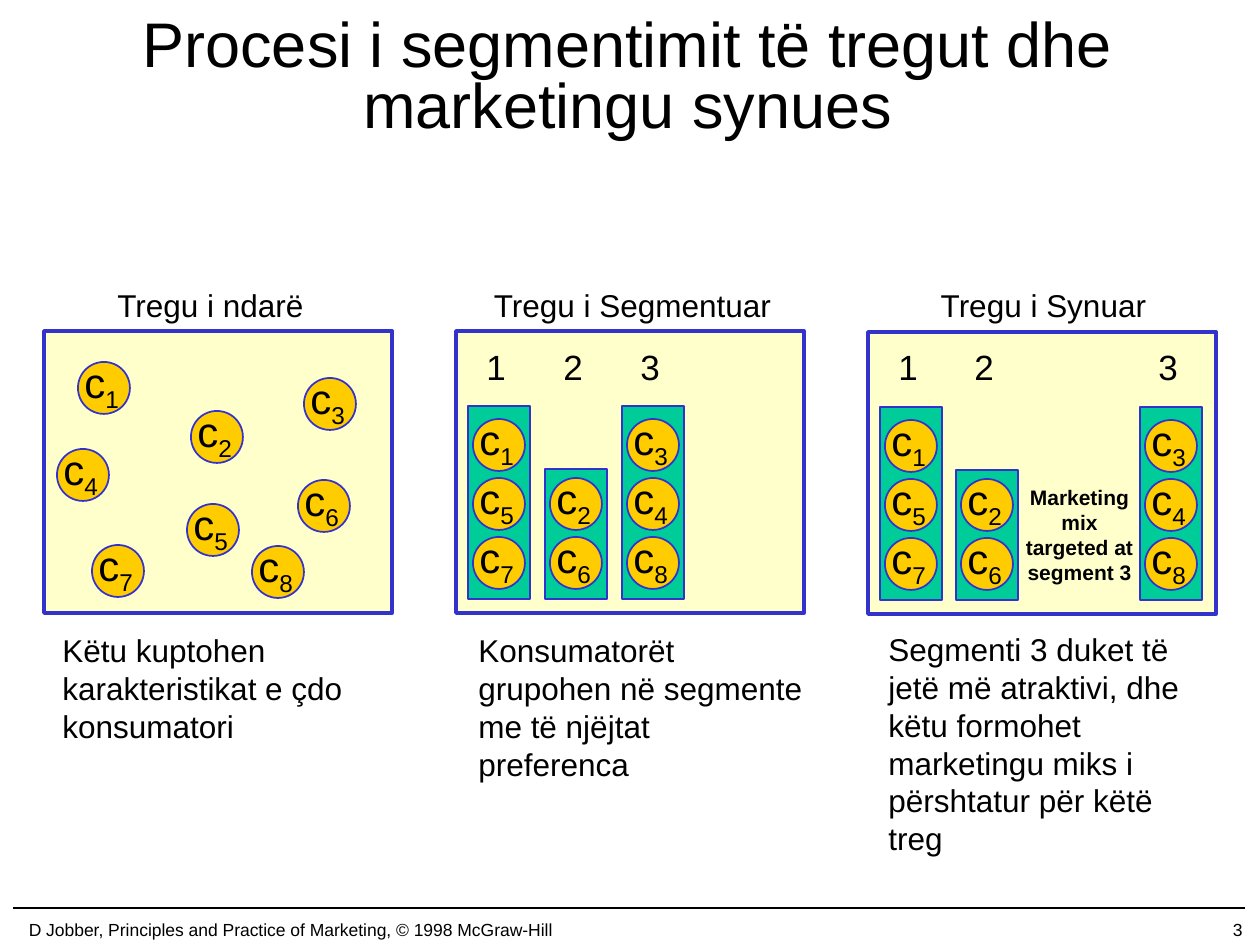
from pptx import Presentation
from pptx import util as u
from pptx.dml.color import RGBColor
from pptx.enum import shapes, text

BLACK = RGBColor(0x00, 0x00, 0x00)
CREAM = RGBColor(0xFF, 0xFF, 0xCC)
GREEN = RGBColor(0x00, 0xCC, 0x99)
ORANGE = RGBColor(0xFF, 0xCC, 0x00)
BLUE = RGBColor(0x33, 0x33, 0xCC)
LEFT, CENTER, RIGHT = text.PP_ALIGN.LEFT, text.PP_ALIGN.CENTER, text.PP_ALIGN.RIGHT
TOP, MIDDLE = text.MSO_ANCHOR.TOP, text.MSO_ANCHOR.MIDDLE
RECTANGLE, OVAL = shapes.MSO_SHAPE.RECTANGLE, shapes.MSO_SHAPE.OVAL
SCALE = 914400 / 126

presentation = Presentation()
presentation.slide_width = u.Emu(round(1260 * SCALE))
presentation.slide_height = u.Emu(round(945 * SCALE))
slide = presentation.slides.add_slide(presentation.slide_layouts[6])


def add_box(kind, box, fill, line_width):
    shape = slide.shapes.add_shape(kind, *[u.Emu(round(n * SCALE)) for n in box])
    shape.shadow.inherit = False
    shape.fill.solid()
    shape.fill.fore_color.rgb = fill
    shape.line.color.rgb = BLUE
    shape.line.width = u.Pt(line_width)


def add_text(words, box, size, align=LEFT, wrap=False, anchor=TOP, bold=False, subscript=None):
    shape = slide.shapes.add_textbox(*[u.Emu(round(n * SCALE)) for n in box])
    frame = shape.text_frame
    frame.word_wrap = wrap
    frame.vertical_anchor = anchor
    paragraph = frame.paragraphs[0]
    paragraph.alignment = align
    values = {"size": u.Pt(size), "name": "Arial", "bold": bold}
    for part in filter(None, (words, subscript)):
        run = paragraph.add_run()
        run.text = part
        for name, value in values.items():
            setattr(run.font, name, value)
        run.font.color.rgb = BLACK
        if part == subscript:
            run._r.get_or_add_rPr().set("baseline", "-25000")
    return paragraph


rule = slide.shapes.add_connector(
    shapes.MSO_CONNECTOR.STRAIGHT, *[u.Emu(round(n * SCALE)) for n in (13, 908, 1245, 908)])
rule.line.color.rgb = BLACK
rule.line.width = u.Pt(1)
rule._element.spPr.get_or_add_effectLst() if hasattr(rule._element.spPr, "get_or_add_effectLst") else None
add_text("3", (993, 914, 262, 31), 10, RIGHT, anchor=MIDDLE)
add_text("D Jobber, Principles and Practice of Marketing, © 1998 McGraw-Hill",
         (0, 914, 581, 31), 10, CENTER, anchor=MIDDLE)
title = add_text("Procesi i segmentimit të tregut dhe marketingu synues",
                 (92, 1, 1071, 158), 36, CENTER, True, MIDDLE)
title.line_spacing = 0.8

panels = [
    (44, 331, "Tregu i ndarë", (105, 280, 218, 50), LEFT,
     "Këtu kuptohen karakteristikat e çdo konsumatori", (50, 625, 343, 127)),
    (456, 331, "Tregu i Segmentuar", (480, 280, 305, 50), CENTER,
     "Konsumatorët grupohen në segmente me të njëjtat preferenca", (466, 625, 354, 165)),
    (868, 332, "Tregu i Synuar", (866, 280, 355, 52), CENTER,
     "Segmenti 3 duket të jetë më atraktivi, dhe këtu formohet marketingu miks "
     "i përshtatur për këtë treg", (876, 624, 340, 241)),
]
for left, top, heading, heading_box, align, caption, caption_box in panels:
    add_box(RECTANGLE, (left, top, 348, 282), CREAM, 2)
    add_text(heading, heading_box, 18, align)
    add_text(caption, caption_box, 18, wrap=True)

customers = [
    ("1", 78, 362), ("2", 191, 411), ("3", 304, 378), ("4", 57, 449),
    ("5", 187, 504), ("6", 298, 480), ("7", 92, 545), ("8", 252, 546),
]
segments = [("1", "157"), ("2", "26"), ("3", "348")]
for bottom, bar_lefts in ((599, (468, 545, 622)), (600, (880, 956, 1140))):
    for bar_left, (number, members) in zip(bar_lefts, segments):
        height = 63 * len(members) + 4
        add_box(RECTANGLE, (bar_left, bottom - height, 62, height), GREEN, 1)
        add_text(number, (bar_left + 6, 339, 47, 55), 20)
        for row, member in enumerate(reversed(members)):
            customers.append((member, bar_left + 5, bottom - 62 - 59 * row))

for number, left, top in customers:
    add_box(OVAL, (left, top, 52, 52), ORANGE, 1)
    add_text("c", (left - 6, top - 12, 63, 64), 24, subscript=number)

add_text("Marketing mix targeted at segment 3", (1012, 478, 135, 115), 12, CENTER, True, bold=True)

presentation.save("out.pptx")
